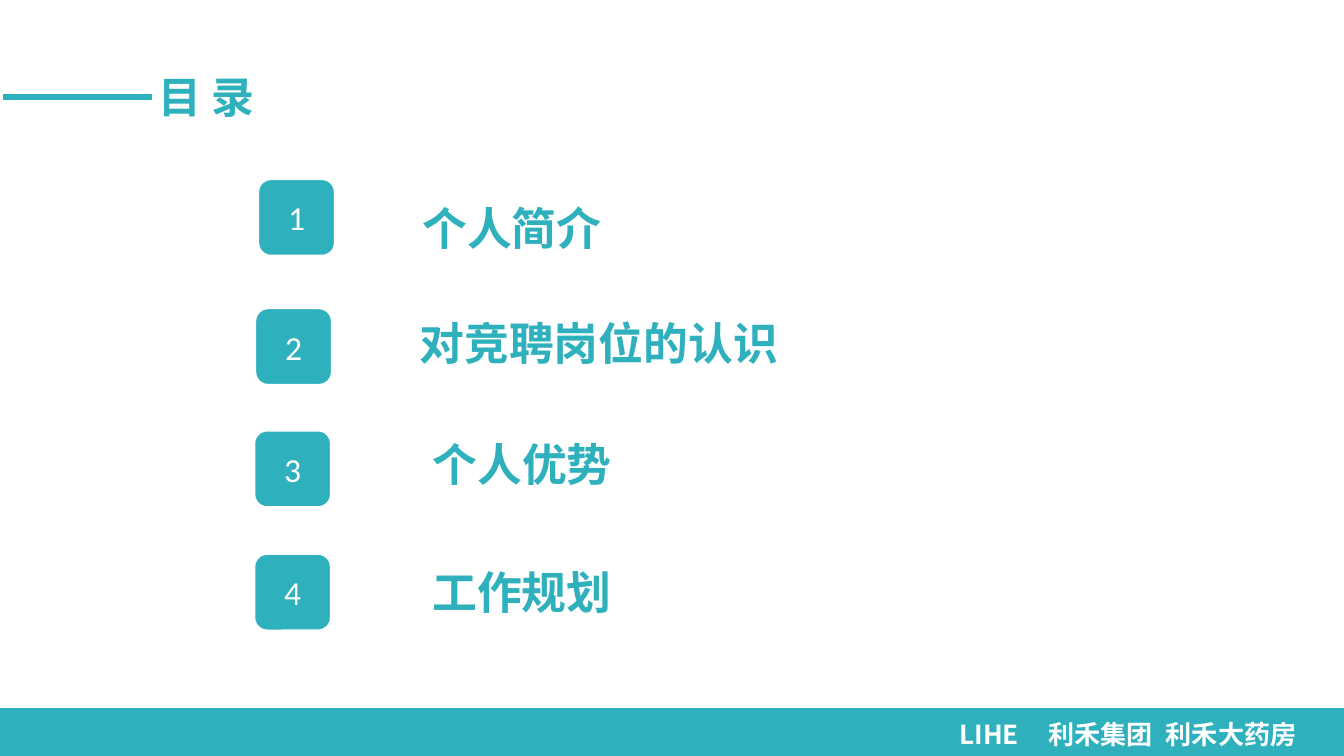
from dataclasses import dataclass

from lxml.etree import SubElement
from pptx import Presentation
from pptx.dml.color import RGBColor
from pptx.enum.shapes import MSO_CONNECTOR as Conn, MSO_SHAPE as Shape
from pptx.enum.text import MSO_ANCHOR as Anchor, MSO_AUTO_SIZE as AutoSize, PP_ALIGN as Align
from pptx.oxml.ns import qn
from pptx.util import Pt

TEAL, WHITE = "2EB0BD", "FFFFFF"
LATIN, CJK = "Calibri", "Noto Sans CJK SC"
BADGE = 41


@dataclass
class Label:
    text: str
    x: float
    y: float
    w: float
    h: float = 36
    size: float = 24
    font: str = LATIN
    color: str = TEAL
    inset: tuple[float, float] = (7.2, 3.6)
    wrap: bool = False
    tabs: tuple[float, ...] = ()


@dataclass
class Entry:
    badge_x: float
    badge_y: float
    label: Label


def rgb(value: str) -> RGBColor:
    return RGBColor.from_string(value)


def write(p, text: str, color: str, **fmt) -> None:
    r = p.add_run()
    r.text = text
    for name, value in fmt.items():
        setattr(r.font, name, value)
    r.font.color.rgb = rgb(color)
    SubElement(r.font._element, qn("a:ea"), typeface=CJK)


def add_block(s, kind: Shape, x: float, y: float, w: float, h: float):
    sp = s.shapes.add_shape(kind, Pt(x), Pt(y), Pt(w), Pt(h))
    sp.shadow.inherit = False
    sp.fill.solid()
    sp.fill.fore_color.rgb = rgb(TEAL)
    sp.line.fill.background()
    return sp


def add_badge(s, number: int, x: float, y: float) -> None:
    sp = add_block(s, Shape.ROUNDED_RECTANGLE, x, y, BADGE, BADGE)
    sp.line.color.rgb = rgb(WHITE)
    sp.line.width = Pt(1)
    tf = sp.text_frame
    tf.vertical_anchor = Anchor.MIDDLE
    p = tf.paragraphs[0]
    p.alignment = Align.CENTER
    write(p, str(number), WHITE, name=LATIN, size=Pt(18))


def add_label(s, label: Label) -> None:
    sp = s.shapes.add_textbox(Pt(label.x), Pt(label.y), Pt(label.w), Pt(label.h))
    tf = sp.text_frame
    side, top = map(Pt, label.inset)
    frame = dict(margin_left=side, margin_right=side, margin_top=top, margin_bottom=top,
                 word_wrap=label.wrap, auto_size=AutoSize.SHAPE_TO_FIT_TEXT)
    for name, value in frame.items():
        setattr(tf, name, value)
    p = tf.paragraphs[0]
    if label.tabs:
        stops = SubElement(p._p.get_or_add_pPr(), qn("a:tabLst"))
        for pos in label.tabs:
            SubElement(stops, qn("a:tab"), pos=str(int(Pt(pos))), algn="l")
    write(p, label.text, label.color, name=label.font, size=Pt(label.size), bold=True)


def add_rule(s, x1: float, x2: float, y: float) -> None:
    line = s.shapes.add_connector(Conn.STRAIGHT, Pt(x1), Pt(y), Pt(x2), Pt(y))
    line.line.color.rgb = rgb(TEAL)
    line.line.width = Pt(3)
    SubElement(line._element.spPr, qn("a:effectLst"))


TITLE = Label("目 录", 80.6, 35.7, 64, 31.7, size=23, inset=(4.3, 2.2), wrap=True)
ENTRIES = [
    Entry(138.4, 96, Label("个人简介", 219.2, 104, 111.6, font=CJK, wrap=True)),
    Entry(136.8, 165.2, Label("对竞聘岗位的认识", 217.7, 165.6, 206.6)),
    Entry(136.3, 230.7, Label("个人优势", 224.6, 230.4, 111.6)),
    Entry(136.3, 296.8, Label("工作规划", 224.6, 298.8, 110.2)),
]
FOOTER = Label("LIHE\t利禾集团\t利禾大药房", 509, 382, 216.7, 22.3, size=14, font=CJK,
               color=WHITE, inset=(5, 2.9), wrap=True, tabs=(47.5, 110.5))


def main() -> None:
    prs = Presentation()
    prs.slide_width, prs.slide_height = Pt(720), Pt(405)
    s = prs.slides.add_slide(prs.slide_layouts[6])

    # Heading
    add_label(s, TITLE)
    add_rule(s, 1.4, 81.2, 51.9)

    # Contents list
    for number, entry in enumerate(ENTRIES, 1):
        add_badge(s, number, entry.badge_x, entry.badge_y)
        add_label(s, entry.label)

    # Footer band
    add_block(s, Shape.RECTANGLE, 0, 379.4, 720, 26.6)
    add_label(s, FOOTER)

    prs.save("out.pptx")


if __name__ == "__main__":
    main()
